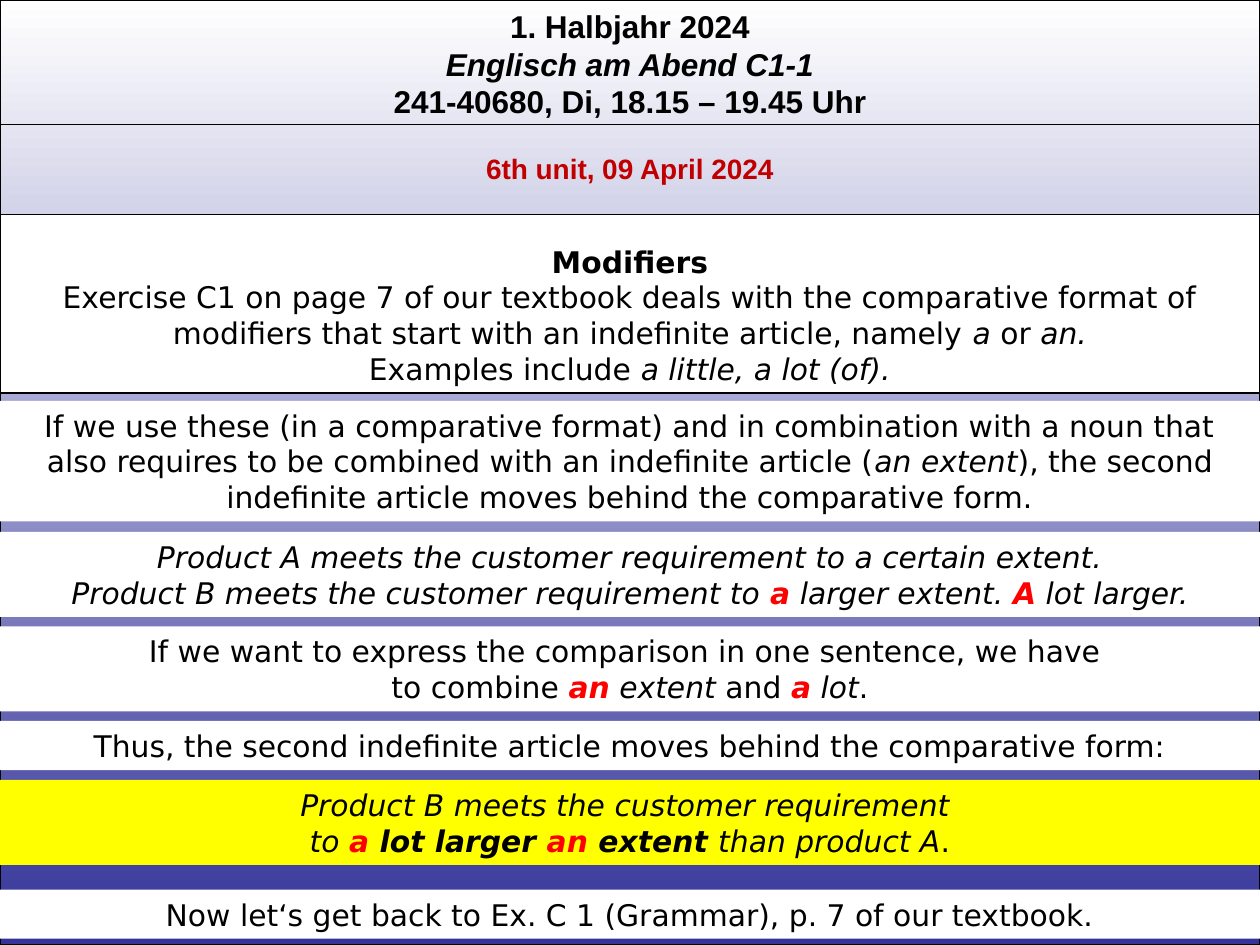
from pptx import Presentation
from pptx.dml.color import RGBColor
from pptx.enum.shapes import MSO_CONNECTOR, MSO_SHAPE
from pptx.enum.text import MSO_ANCHOR, PP_ALIGN
from pptx.util import Pt
from lxml import etree

RECTANGLE, STRAIGHT = MSO_SHAPE.RECTANGLE, MSO_CONNECTOR.STRAIGHT
TOP, BOTTOM, CENTER = MSO_ANCHOR.TOP, MSO_ANCHOR.BOTTOM, PP_ALIGN.CENTER
DRAWING = "http://schemas.openxmlformats.org/drawingml/2006/main"

WIDTH, HEIGHT = 720, 540
INSET, LINE_HEIGHT = 3.85, 20.4
BLACK, WHITE, YELLOW, BLUE = "000000", "FFFFFF", "FFFF00", "333399"

# Named run formats
HEADER = {"name": "Arial", "size": Pt(18), "bold": True, "color": BLACK}
DATE = HEADER | {"size": Pt(16), "color": "C00000"}
PLAIN = {"name": "DejaVu Sans", "size": Pt(17), "bold": False, "italic": False, "color": BLACK}
ITALIC = PLAIN | {"italic": True}
BOLD = PLAIN | {"bold": True}
STRONG = ITALIC | {"bold": True}
RED = STRONG | {"color": "FF0000"}

# Text blocks: a list of paragraphs, each a list of (text, format)
COURSE = [
    [("1. Halbjahr 2024", HEADER)],
    [("Englisch am Abend C1-1", HEADER | {"italic": True})],
    [("241-40680, Di, 18.15 – 19.45 Uhr", HEADER)],
]
UNIT = [[("6th unit, 09 April 2024", DATE)]]
MODIFIERS = [
    [("Modifiers", BOLD)],
    [("Exercise C1 on page 7 of our textbook deals with the comparative format of "
      "modifiers that start with an indefinite article, namely ", PLAIN),
     ("a", ITALIC), (" or ", PLAIN), ("an.", ITALIC)],
    [("Examples include ", PLAIN), ("a little, a lot (of).", ITALIC)],
]

# Bands: top, number of lines, fill, text
BANDS = [
    (229, 3, WHITE, [
        [("If we use these (in a comparative format) and in combination with a noun that "
          "also requires to be combined with an indefinite article (", PLAIN),
         ("an extent", ITALIC),
         ("), the second indefinite article moves behind the comparative form.", PLAIN)]]),
    (304, 2, WHITE, [
        [("Product A meets the customer requirement to a certain extent.", ITALIC)],
        [("Product B meets the customer requirement to ", ITALIC), ("a", RED),
         (" larger extent. ", ITALIC), ("A", RED), (" lot larger.", ITALIC)]]),
    (358, 2, WHITE, [
        [("If we want to express the comparison in one sentence, we have ", PLAIN)],
        [("to combine ", PLAIN), ("an", RED), (" extent ", ITALIC), ("and ", PLAIN),
         ("a", RED), (" lot", ITALIC), (".", PLAIN)]]),
    (412, 1, WHITE, [
        [("Thus, the second indefinite article moves behind the comparative form:", PLAIN)]]),
    (445.7, 2, YELLOW, [
        [("Product B meets the customer requirement ", ITALIC)],
        [("to ", ITALIC), ("a", RED), (" lot larger ", STRONG), ("an", RED),
         (" extent ", STRONG), ("than product A", ITALIC), (".", PLAIN)]]),
    (508.3, 1, WHITE, [
        [("Now let‘s get back to Ex. C 1 (Grammar), p. 7 of our textbook.", PLAIN)]]),
]


def rgb(value):
    return RGBColor.from_string(value)


def outline(line):
    line.color.rgb = rgb(BLACK)
    line.width = Pt(0.75)


def write(shape, paragraphs, anchor=TOP):
    frame = shape.text_frame
    frame.word_wrap = True
    frame.vertical_anchor = anchor
    frame.margin_top = frame.margin_bottom = Pt(INSET)
    for index, runs in enumerate(paragraphs):
        para = frame.add_paragraph() if index else frame.paragraphs[0]
        para.alignment = CENTER
        for text, style in runs:
            span = para.add_run()
            span.text = text
            for key, value in style.items():
                if key == "color":
                    span.font.color.rgb = rgb(value)
                else:
                    setattr(span.font, key, value)


def add_band(page, top, height, fill=None, bordered=False):
    """Add a full-width rectangle."""
    box = page.shapes.add_shape(RECTANGLE, 0, Pt(top), Pt(WIDTH), Pt(height))
    box.shadow.inherit = False
    if fill:
        box.fill.solid()
        box.fill.fore_color.rgb = rgb(fill)
    if bordered:
        outline(box.line)
    else:
        box.line.fill.background()
    return box


def add_label(page, top, height, paragraphs):
    write(page.shapes.add_textbox(0, Pt(top), Pt(WIDTH), Pt(height)), paragraphs)


deck = Presentation()
deck.slide_width, deck.slide_height = Pt(WIDTH), Pt(HEIGHT)
page = deck.slides.add_slide(deck.slide_layouts[6])

# Gradient backdrop, white at the top
backdrop = add_band(page, 0, HEIGHT, bordered=True)
backdrop.fill.gradient()
backdrop.fill.gradient_angle = 270
for stop, color, position in zip(backdrop.fill.gradient_stops, (WHITE, BLUE), (0, 1)):
    stop.color.rgb = rgb(color)
    stop.position = position

# Course header with its rule, then the unit date
add_label(page, 0, 72.7, COURSE)
rule = page.shapes.add_connector(STRAIGHT, 0, Pt(71.3), Pt(WIDTH), Pt(71.3))
outline(rule.line)
etree.SubElement(rule.line._get_or_add_ln().getparent(), f"{{{DRAWING}}}effectLst")
add_label(page, 82.8, 26.6, UNIT)

# Topic box and the bands below it
write(add_band(page, 122.4, 102.2, WHITE, bordered=True), MODIFIERS, BOTTOM)
for top, lines, fill, paragraphs in BANDS:
    write(add_band(page, top, lines * LINE_HEIGHT + 2 * INSET, fill), paragraphs)

deck.save("out.pptx")
